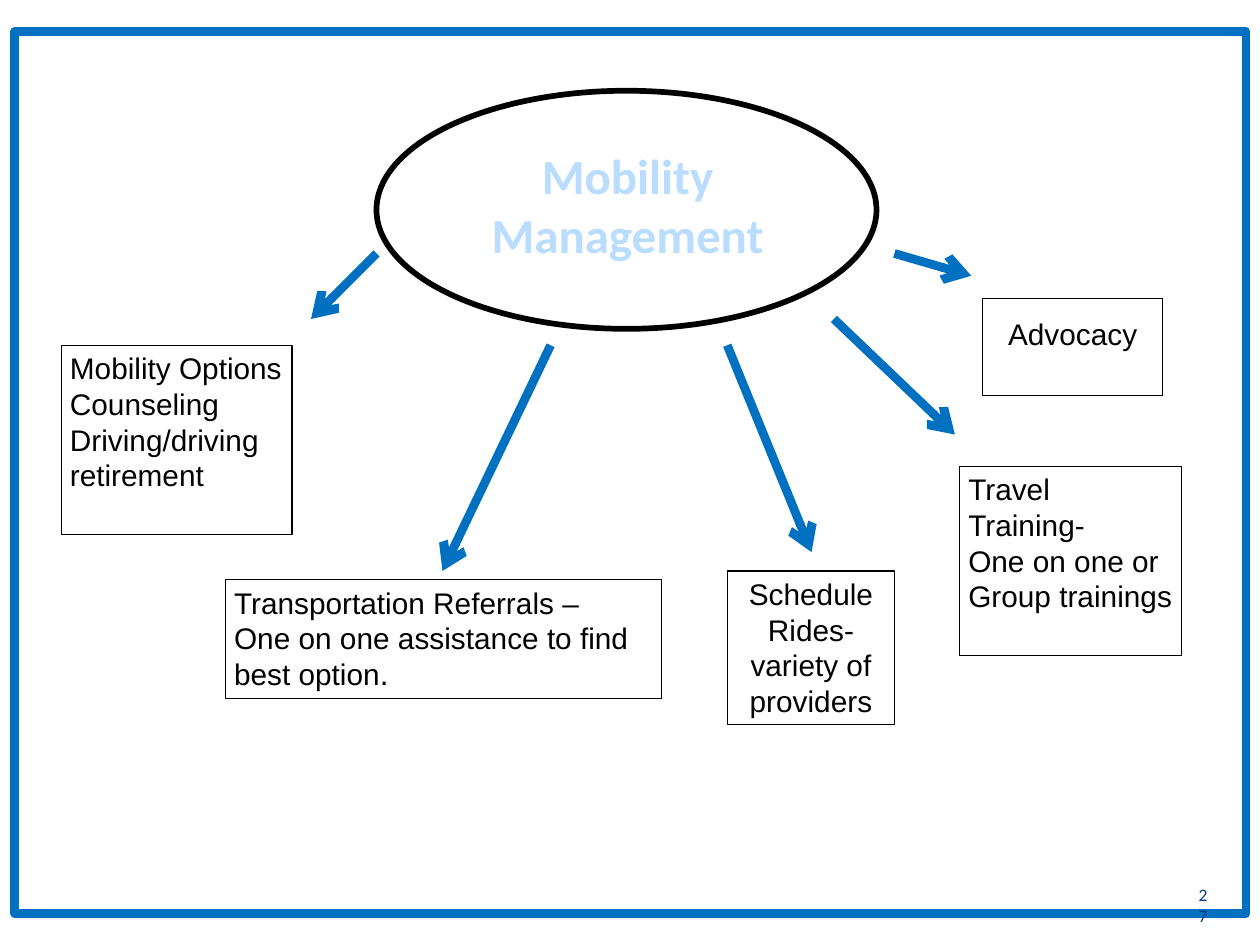
from lxml import etree
from pptx import Presentation
from pptx.dml.color import RGBColor
from pptx.enum.shapes import MSO_CONNECTOR, MSO_SHAPE
from pptx.enum.text import MSO_ANCHOR, PP_ALIGN
from pptx.oxml.ns import qn
from pptx.util import Cm, Pt

LEFT, MID = PP_ALIGN.LEFT, PP_ALIGN.CENTER
TOP, CENTER = MSO_ANCHOR.TOP, MSO_ANCHOR.MIDDLE
RECT, OVAL = MSO_SHAPE.RECTANGLE, MSO_SHAPE.OVAL
LINE = MSO_CONNECTOR.STRAIGHT
HUES = {"ink": "000000", "blue": "0070C0", "pale": "BADDFF", "navy": "073E87"}


def outline(kind, area, hue, width):
    shape = slide.shapes.add_shape(kind, *map(Cm, area))
    shape.shadow.inherit = False
    shape.fill.background()
    shape.line.color.rgb = RGBColor.from_string(HUES[hue])
    shape.line.width = Pt(width)
    return shape


def write(shape, text, font, size, hue, align, anchor, bold=False):
    frame = shape.text_frame
    frame.text = text
    frame.word_wrap = True
    frame.vertical_anchor = anchor
    frame.margin_left = frame.margin_right = Cm(0.17)
    frame.margin_top = frame.margin_bottom = Cm(0.1)
    for para in frame.paragraphs:
        para.alignment = align
        for run in para.runs:
            run.font.name = font
            run.font.size = Pt(size)
            run.font.bold = bold
            run.font.color.rgb = RGBColor.from_string(HUES[hue])
    return frame


deck = Presentation()
deck.slide_width, deck.slide_height = Cm(25.4), Cm(19.05)
slide = deck.slides.add_slide(deck.slide_layouts[5])

title = slide.shapes.title
title.left, title.top, title.width, title.height = map(Cm, (8.6, 2.6, 8.1, 3.05))
write(title, "Mobility\nManagement", "Calibri", 28, "pale", MID, CENTER, True)
outline(OVAL, (7.59, 1.83, 10.08, 4.8), "ink", 3.25)

boxes = [
    ("Mobility Options Counseling\nDriving/driving retirement",
     (1.24, 6.96, 4.65, 3.81), LEFT),
    ("Transportation Referrals –\nOne on one assistance to find\nbest option.",
     (4.55, 11.68, 8.79, 2.41), LEFT),
    ("Schedule Rides-\nvariety of providers", (14.66, 11.51, 3.38, 3.1), MID),
    ("Travel Training-\nOne on one or\nGroup trainings",
     (19.35, 9.4, 4.47, 3.81), LEFT),
    ("Advocacy", (19.81, 6.02, 3.63, 1.96), MID),
]
for text, area, align in boxes:
    box = outline(RECT, area, "ink", 0.75)
    frame = write(box, text, "Arial", 17, "ink", align, TOP)
    for para in frame.paragraphs:
        para.line_spacing = Pt(20.4)
    if text == "Advocacy":
        frame.margin_top = Cm(0.35)
    if text.endswith("option."):
        last = frame.paragraphs[-1]
        last.runs[0].text = "best option"
        dot = last.add_run()
        dot.text = "."
        dot.font.name = "Arial"
        dot.font.size = Pt(18)
        dot.font.color.rgb = RGBColor.from_string(HUES["ink"])

arrows = [
    (7.59, 5.11, 6.27, 6.43),
    (11.1, 6.96, 8.92, 11.51),
    (14.66, 6.96, 16.36, 11.13),
    (16.81, 6.43, 19.25, 8.76),
    (18.03, 5.11, 19.58, 5.56),
]
for ends in arrows:
    arrow = slide.shapes.add_connector(LINE, *map(Cm, ends))
    arrow.line.color.rgb = RGBColor.from_string(HUES["blue"])
    arrow.line.width = Pt(5)
    etree.SubElement(arrow.line._get_or_add_ln(), qn("a:tailEnd"), type="arrow")
    etree.SubElement(arrow._element.spPr, qn("a:effectLst"))

outline(RECT, (0.3, 0.64, 24.82, 17.78), "blue", 5)
page = slide.shapes.add_textbox(*map(Cm, (23.95, 17.96, 0.61, 0.58)))
write(page, "27", "Calibri", 10, "navy", MID, CENTER)

deck.save("out.pptx")
